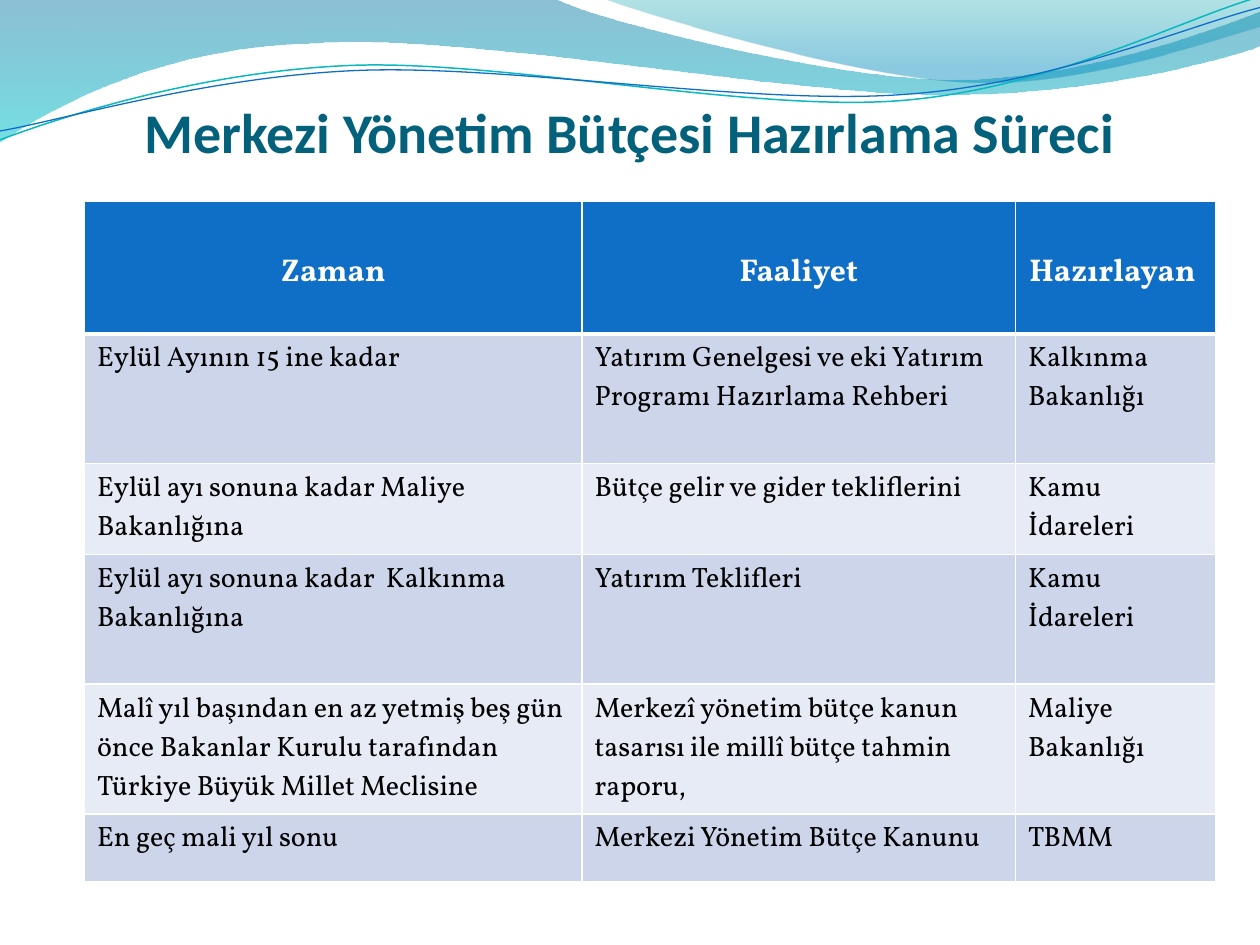
import math
from lxml import etree
from pptx import Presentation
from pptx.dml.color import RGBColor
from pptx.enum import text
from pptx.oxml.ns import qn
from pptx.util import Inches, Pt

WHITE = RGBColor(0xFF, 0xFF, 0xFF)
BLACK = RGBColor(0, 0, 0)
BLUE = RGBColor(0x0F, 0x6F, 0xC6)
TEAL = RGBColor(0x0A, 0xB8, 0xBF)
TITLE = RGBColor(0x04, 0x61, 0x7B)
BAND_DARK = RGBColor(0xCC, 0xD5, 0xEA)
BAND_LIGHT = RGBColor(0xE7, 0xEB, 0xF5)
WAVE_TOP = RGBColor(0x00, 0x74, 0xA1)
WAVE_BOTTOM = RGBColor(0x00, 0xC6, 0xCF)
CREST_TOP = RGBColor(0x00, 0xA1, 0xA9)
CREST_BOTTOM = RGBColor(0x00, 0x8B, 0xBF)
TILT = 357.3

prs = Presentation()
prs.slide_width, prs.slide_height = Inches(10), Inches(7.5)
s = prs.slides.add_slide(prs.slide_layouts[6])


def add_curve(start, segments, close, center=(0, 0), rotation=0):
    cos, sin = math.cos(math.radians(-rotation)), math.sin(math.radians(-rotation))
    cx, cy = center
    segs = []
    for seg in [start] + segments:
        pairs = [(x - cx, y - cy) for x, y in zip(seg[::2], seg[1::2])]
        segs.append([(Inches(cx + x * cos - y * sin), Inches(cy + x * sin + y * cos))
                     for x, y in pairs])
    fb = s.shapes.build_freeform(*segs[0][0])
    fb.add_line_segments([seg[-1] for seg in segs[1:]], close=close)
    sp = fb.convert_to_shape()
    for line_to, seg in zip(list(sp._element.spPr.iter(qn("a:lnTo"))), segs[1:]):
        if len(seg) == 3:
            curve = etree.Element(qn("a:cubicBezTo"))
            for x, y in seg:
                etree.SubElement(curve, qn("a:pt"), x=str(x - sp.left), y=str(y - sp.top))
            line_to.getparent().replace(line_to, curve)
    sp.rotation = rotation
    sp.shadow.inherit = False
    return sp


waves = [
    ((0, 0), [(4.4, -0.01), (4.76, 0.17, 6.64, 0.63, 7.58, 0.63),
              (8.53, 0.63, 9.58, 0.26, 10, 0.09), (10.01, 0.36),
              (9.83, 0.44, 8.7, 0.76, 7.46, 0.75), (6.22, 0.75, 3.82, 0.28, 2.57, 0.34),
              (1.29, 0.36, 0.46, 0.83, -0.01, 1.13), (0, 0)],
     [(0, WAVE_TOP, 45), (1, WAVE_BOTTOM, 55)]),
    ((4.79, -0.01), [(5.09, 0.11, 6.82, 0.62, 7.69, 0.65),
                     (8.56, 0.69, 9.61, 0.32, 10, 0.21), (10, 0), (4.79, -0.01)],
     [(0, CREST_TOP, 30), (0.8, CREST_BOTTOM, 45)]),
]
for start, segments, stops in waves:
    sp = add_curve(start, segments, True)
    sp.line.fill.background()
    sp.fill.gradient()
    sp.fill.gradient_angle = 270
    for stop, (pos, color, alpha) in zip(sp.fill.gradient_stops, stops):
        stop.position = pos
        stop.color.rgb = color
    for clr, (pos, color, alpha) in zip(sp._element.spPr.iter(qn("a:srgbClr")), stops):
        etree.SubElement(clr, qn("a:alpha"), val=str(alpha * 1000))

lines = [
    ((0, 1.11), [(0.48, 0.93, 1.58, 0.57, 2.77, 0.52), (3.95, 0.47, 5.93, 0.89, 7.13, 0.8),
                 (8.33, 0.71, 9.38, 0.15, 9.98, -0.02)], (4.99, 0.57), TEAL, 0.85),
    ((0, 1.04), [(0.47, 0.96, 1.64, 0.61, 2.83, 0.56), (4.03, 0.51, 5.97, 0.84, 7.17, 0.75),
                 (8.36, 0.67, 9.41, 0.21, 10, 0.06)], (5, 0.59), BLUE, 0.75),
]
for start, segments, center, color, width in lines:
    sp = add_curve(start, segments, False, center, TILT)
    sp.fill.background()
    sp.line.color.rgb = color
    sp.line.width = Pt(width)


def add_run(p, txt, font, size, color, bold):
    r = p.add_run()
    r.text = txt
    r.font.name, r.font.size, r.font.bold = font, Pt(size), bold
    r.font.color.rgb = color


tf = s.shapes.add_textbox(Inches(0.5), Inches(0.77), Inches(9), Inches(0.54)).text_frame
tf.word_wrap = True
tf.vertical_anchor = text.MSO_ANCHOR.BOTTOM
tf.margin_left = tf.margin_right = tf.margin_bottom = 0
tf.paragraphs[0].alignment = text.PP_ALIGN.CENTER
add_run(tf.paragraphs[0], "Merkezi Yönetim Bütçesi Hazırlama Süreci", "Calibri", 32, TITLE, True)

rows = [
    ("Zaman", "Faaliyet", "Hazırlayan "),
    ("Eylül Ayının 15 ine kadar",
     "Yatırım Genelgesi ve eki Yatırım Programı Hazırlama Rehberi", "Kalkınma Bakanlığı"),
    ("Eylül ayı sonuna kadar Maliye Bakanlığına",
     "Bütçe gelir ve gider tekliflerini", "Kamu İdareleri"),
    ("Eylül ayı sonuna kadar  Kalkınma Bakanlığına", "Yatırım Teklifleri", "Kamu İdareleri"),
    ("Malî yıl başından en az yetmiş beş gün önce Bakanlar Kurulu tarafından "
     "Türkiye Büyük Millet Meclisine",
     "Merkezî yönetim bütçe kanun tasarısı ile millî bütçe tahmin raporu,", "Maliye Bakanlığı"),
    ("En geç mali yıl sonu", "Merkezi Yönetim Bütçe Kanunu", "TBMM"),
]
col_widths = [3.95, 3.44, 1.59]
row_heights = [1.05, 1.03, 0.72, 1.03, 1.03, 0.54]
table = s.shapes.add_table(len(rows), len(col_widths), Inches(0.67), Inches(1.6),
                           Inches(sum(col_widths)), Inches(sum(row_heights))).table
for col, width in zip(table.columns, col_widths):
    col.width = Inches(width)
for row, height in zip(table.rows, row_heights):
    row.height = Inches(height)

for i, values in enumerate(rows):
    for j, value in enumerate(values):
        cell = table.cell(i, j)
        tcPr = cell._tc.get_or_add_tcPr()
        for side in ("L", "R", "T", "B"):
            heavy = (i, side) in ((0, "B"), (1, "T"))
            ln = etree.SubElement(tcPr, qn(f"a:ln{side}"), w=str(Pt(3 if heavy else 1)))
            fill = etree.SubElement(ln, qn("a:solidFill"))
            etree.SubElement(fill, qn("a:srgbClr"), val=str(WHITE))
        cell.fill.solid()
        p = cell.text_frame.paragraphs[0]
        if i == 0:
            cell.fill.fore_color.rgb = BLUE
            cell.vertical_anchor = text.MSO_ANCHOR.MIDDLE
            cell.margin_top = Inches(0.14)
            p.alignment = text.PP_ALIGN.CENTER
            add_run(p, value, "Vollkorn", 18, WHITE, True)
        else:
            cell.fill.fore_color.rgb = BAND_DARK if i % 2 else BAND_LIGHT
            add_run(p, value, "Vollkorn", 16, BLACK, False)

prs.save("out.pptx")
